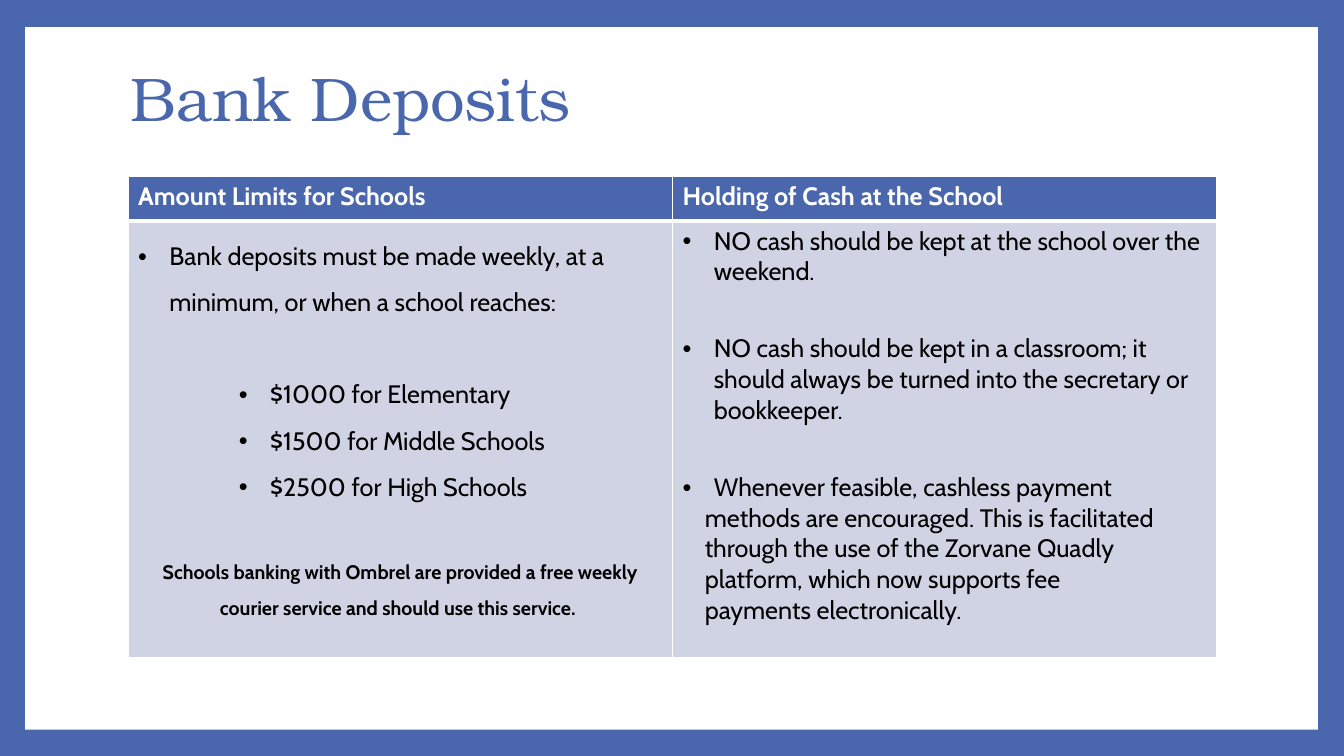
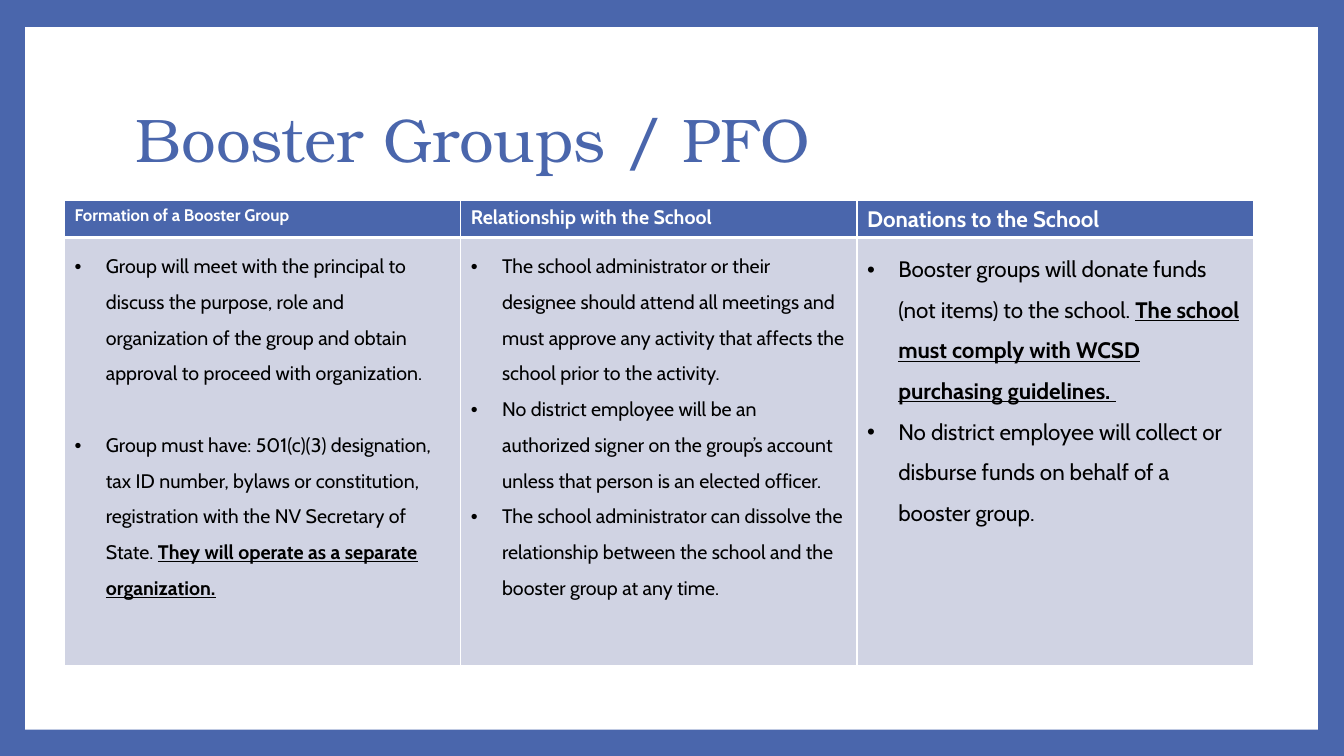
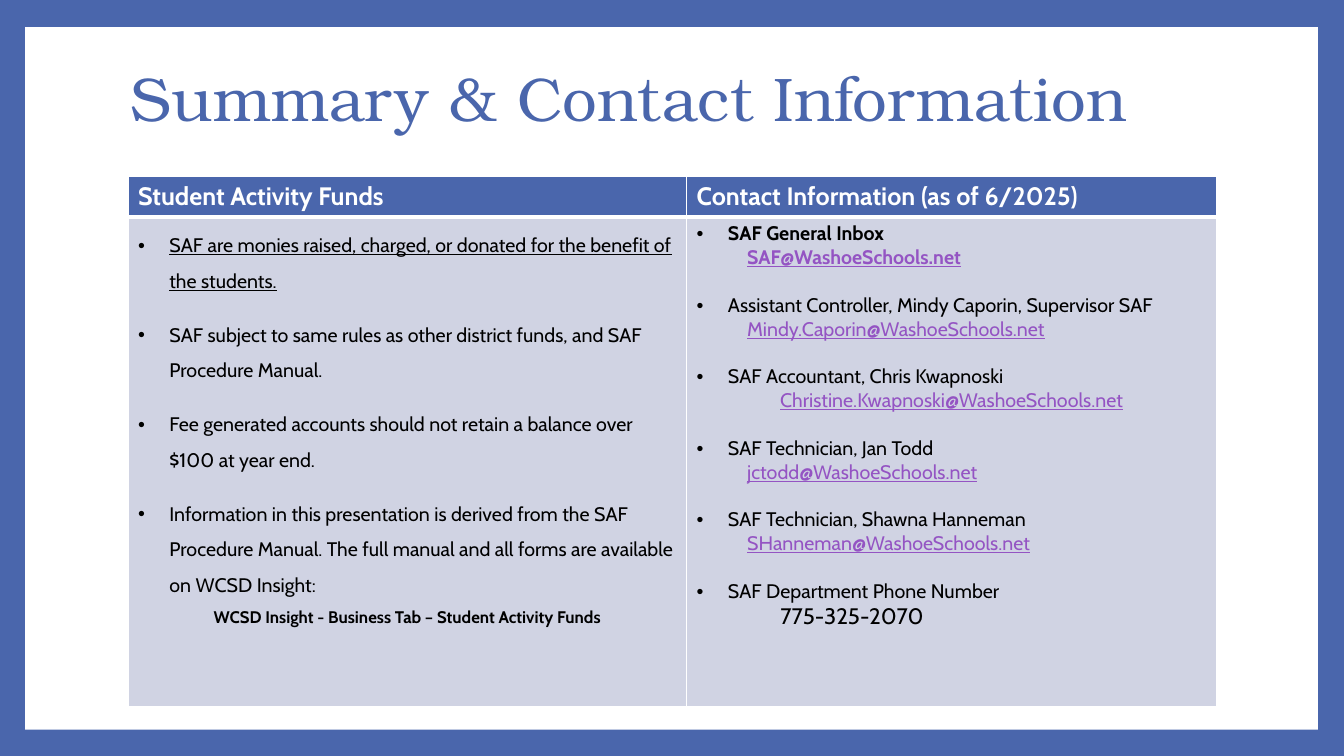
from lxml import etree
from pptx import Presentation
from pptx.dml.color import RGBColor
from pptx.enum.shapes import MSO_SHAPE
from pptx.enum.text import MSO_ANCHOR, PP_ALIGN
from pptx.oxml.ns import qn
from pptx.util import Inches, Pt

BLUE = RGBColor(0x4A, 0x66, 0xAC)
PALE = RGBColor(0xD0, 0xD3, 0xE3)
WHITE = RGBColor(0xFF, 0xFF, 0xFF)
BLACK = RGBColor(0x00, 0x00, 0x00)
PURPLE = RGBColor(0x94, 0x54, 0xC3)
TITLE_FONT = "TeX Gyre Bonum"
BODY_FONT = "Cabin"
HANGING = 0.31


def entry(*runs, size=14, spacing=1.5, before=0, bullet=True, left=HANGING,
          align=None, tab=None, color=BLACK):
    """Describe a paragraph; each run is a text or a (text, flags) pair, b bold and u underlined."""
    pairs = [run if isinstance(run, tuple) else (run, "") for run in runs]
    return dict(runs=pairs, size=size, spacing=spacing, before=before, bullet=bullet,
                left=left, align=align, tab=tab, color=color)


def write_cell(cell, entries, fill, top, bottom):
    """Fill a table cell with its paragraphs and draw its white borders."""
    cell.fill.solid()
    cell.fill.fore_color.rgb = fill
    properties = cell._tc.get_or_add_tcPr()
    for index, (side, width) in enumerate(
            [("lnL", 1), ("lnR", 1), ("lnT", top), ("lnB", bottom)]):
        line = etree.Element(qn("a:" + side), w=str(Pt(width)))
        line_fill = etree.SubElement(line, qn("a:solidFill"))
        etree.SubElement(line_fill, qn("a:srgbClr"), val=str(WHITE))
        properties.insert(index, line)

    for index, item in enumerate(entries):
        paragraph = cell.text_frame.paragraphs[0] if index == 0 else cell.text_frame.add_paragraph()
        paragraph.alignment = item["align"]
        paragraph.line_spacing = item["spacing"]
        paragraph.space_before = Pt(item["before"])
        layout = paragraph._p.get_or_add_pPr()
        layout.set("marL", str(Inches(item["left"])))
        layout.set("indent", str(Inches(-HANGING if item["bullet"] else 0)))
        if item["bullet"]:
            etree.SubElement(layout, qn("a:buFont"), typeface="Arial")
            etree.SubElement(layout, qn("a:buChar"), char="•")
        else:
            etree.SubElement(layout, qn("a:buNone"))
        if item["tab"]:
            stops = etree.SubElement(layout, qn("a:tabLst"))
            etree.SubElement(stops, qn("a:tab"), pos=str(Inches(item["tab"])), algn="l")
        for text, flags in item["runs"]:
            run = paragraph.add_run()
            run.text = text
            run.font.name = BODY_FONT
            run.font.size = Pt(item["size"])
            run.font.color.rgb = item["color"]
            run.font.bold = "b" in flags
            run.font.underline = "u" in flags


# Paragraph styles that recur
limit = dict(size=18, left=1.31)
holding = dict(size=18, spacing=1)
holding_line = dict(size=18, spacing=1, bullet=False, left=0.22)
contact = dict(spacing=1, before=17)
mail = dict(spacing=1, bullet=False, left=0, color=PURPLE)

# Slide content: title and its place, table place, column widths, row heights, headers, bodies
slides = [
    dict(
        title="Bank Deposits", title_at=(1.2, 0.27), table_at=(1.27, 1.75),
        columns=[5.4, 5.4], rows=[0.44, 4.33],
        headers=[("Amount Limits for Schools", 18), ("Holding of Cash at the School", 18)],
        bodies=[
            [
                entry("Bank deposits must be made weekly, at a minimum, or when a school reaches:",
                      size=18),
                entry("$1000 for Elementary", before=33, **limit),
                entry("$1500 for Middle Schools", **limit),
                entry("$2500 for High Schools", **limit),
                entry(("Schools banking with Ombrel are provided a free weekly courier service "
                       "and should use this service. ", "b"),
                      before=33, bullet=False, left=0, align=PP_ALIGN.CENTER),
            ],
            [
                entry("NO cash should be kept at the school over the weekend.", **holding),
                entry("NO cash should be kept in a classroom; it should always be turned into "
                      "the secretary or bookkeeper.", before=33, **holding),
                entry("Whenever feasible, cashless payment", before=33, **holding),
                entry("methods are encouraged. This is facilitated", **holding_line),
                entry("through the use of the Zorvane Quadly", **holding_line),
                entry("platform, which now supports fee", **holding_line),
                entry("payments electronically.", **holding_line),
            ],
        ],
    ),
    dict(
        title="Booster Groups / PFO", title_at=(1.25, 0.67), table_at=(0.64, 1.99),
        columns=[3.93] * 3, rows=[0.35, 4.25],
        headers=[("Formation of a Booster Group", 12), ("Relationship with the School", 14),
                 ("Donations to the School", 16)],
        bodies=[
            [
                entry("Group will meet with the principal to discuss the purpose, role and "
                      "organization of the group and obtain approval to proceed with organization."),
                entry("Group must have: 501(c)(3) designation, tax ID number, bylaws or "
                      "constitution, registration with the NV Secretary of State. ",
                      ("They will operate as a separate organization.", "bu"), before=25.6),
            ],
            [
                entry("The school administrator or their designee should attend all meetings and "
                      "must approve any activity that affects the school prior to the activity."),
                entry("No district employee will be an authorized signer on the group’s account "
                      "unless that person is an elected officer."),
                entry("The school administrator can dissolve the relationship between the school "
                      "and the booster group at any time."),
            ],
            [
                entry("Booster groups will donate funds (not items) to the school. ",
                      ("The school must comply with WCSD purchasing guidelines. ", "bu"), size=16),
                entry("No district employee will collect or disburse funds on behalf of a "
                      "booster group.", size=16),
            ],
        ],
    ),
    dict(
        title="Summary & Contact Information", title_at=(1.2, 0.27), table_at=(1.27, 1.75),
        columns=[5.54, 5.26], rows=[0.4, 4.86],
        headers=[("Student Activity Funds", 18), ("Contact Information (as of 6/2025)", 18)],
        bodies=[
            [
                entry(("SAF are monies raised, charged, or donated for the benefit of the "
                       "students.", "u")),
                entry("SAF subject to same rules as other district funds, and SAF Procedure "
                      "Manual.", before=12.8),
                entry("Fee generated accounts should not retain a balance over $100 at year end.",
                      before=12.8),
                entry("Information in this presentation is derived from the SAF Procedure Manual. "
                      "The full manual and all forms are available on WCSD Insight:", before=12.8),
                entry(("WCSD Insight - Business Tab – Student Activity Funds", "b"),
                      size=12, bullet=False, left=0, align=PP_ALIGN.CENTER),
            ],
            [
                entry(("SAF General Inbox", "b"), spacing=1),
                entry(("\tSAF@WashoeSchools.net", "bu"), tab=0.62, **mail),
                entry("Assistant Controller, Mindy Caporin, Supervisor SAF", **contact),
                entry("\t", ("Mindy.Caporin@WashoeSchools.net", "u"), tab=0.57, **mail),
                entry("SAF Accountant, Chris Kwapnoski", **contact),
                entry(("Christine.Kwapnoski@WashoeSchools.net", "u"),
                      align=PP_ALIGN.CENTER, **mail),
                entry("SAF Technician, Jan Todd", **contact),
                entry(("\tjctodd@WashoeSchools.net", "u"), tab=0.57, **mail),
                entry("SAF Technician, Shawna Hanneman", **contact),
                entry(("\tSHanneman@WashoeSchools.net", "u"), tab=0.57, **mail),
                entry("SAF Department Phone Number", **contact),
                entry("775-325-2070", size=16, spacing=1, bullet=False, left=0.83),
            ],
        ],
    ),
]

presentation = Presentation()
presentation.slide_width = Inches(13.33)
presentation.slide_height = Inches(7.5)

for content in slides:
    # Blue border around a white panel
    slide = presentation.slides.add_slide(presentation.slide_layouts[6])
    slide.background.fill.solid()
    slide.background.fill.fore_color.rgb = BLUE
    panel = slide.shapes.add_shape(
        MSO_SHAPE.RECTANGLE, Inches(0.25), Inches(0.27), Inches(12.82), Inches(6.97))
    panel.shadow.inherit = False
    panel.fill.solid()
    panel.fill.fore_color.rgb = WHITE
    panel.line.fill.background()

    # Title
    left, top = content["title_at"]
    title = slide.shapes.add_textbox(Inches(left), Inches(top), Inches(10.8), Inches(1.48))
    title.text_frame.word_wrap = True
    title.text_frame.vertical_anchor = MSO_ANCHOR.MIDDLE
    title.text_frame.text = content["title"]
    paragraph = title.text_frame.paragraphs[0]
    paragraph.line_spacing = 0.9
    font = paragraph.runs[0].font
    font.name = TITLE_FONT
    font.size = Pt(44)
    font.color.rgb = BLUE

    # Table
    left, top = content["table_at"]
    columns, rows = content["columns"], content["rows"]
    table = slide.shapes.add_table(
        len(rows), len(columns), Inches(left), Inches(top),
        Inches(sum(columns)), Inches(sum(rows))).table
    for row, height in zip(table.rows, rows):
        row.height = Inches(height)
    for index, width in enumerate(columns):
        table.columns[index].width = Inches(width)
        text, size = content["headers"][index]
        header = entry((text, "b"), size=size, spacing=1, bullet=False, left=0, color=WHITE)
        write_cell(table.cell(0, index), [header], BLUE, top=1, bottom=3)
        write_cell(table.cell(1, index), content["bodies"][index], PALE, top=3, bottom=1)

presentation.save("out.pptx")
